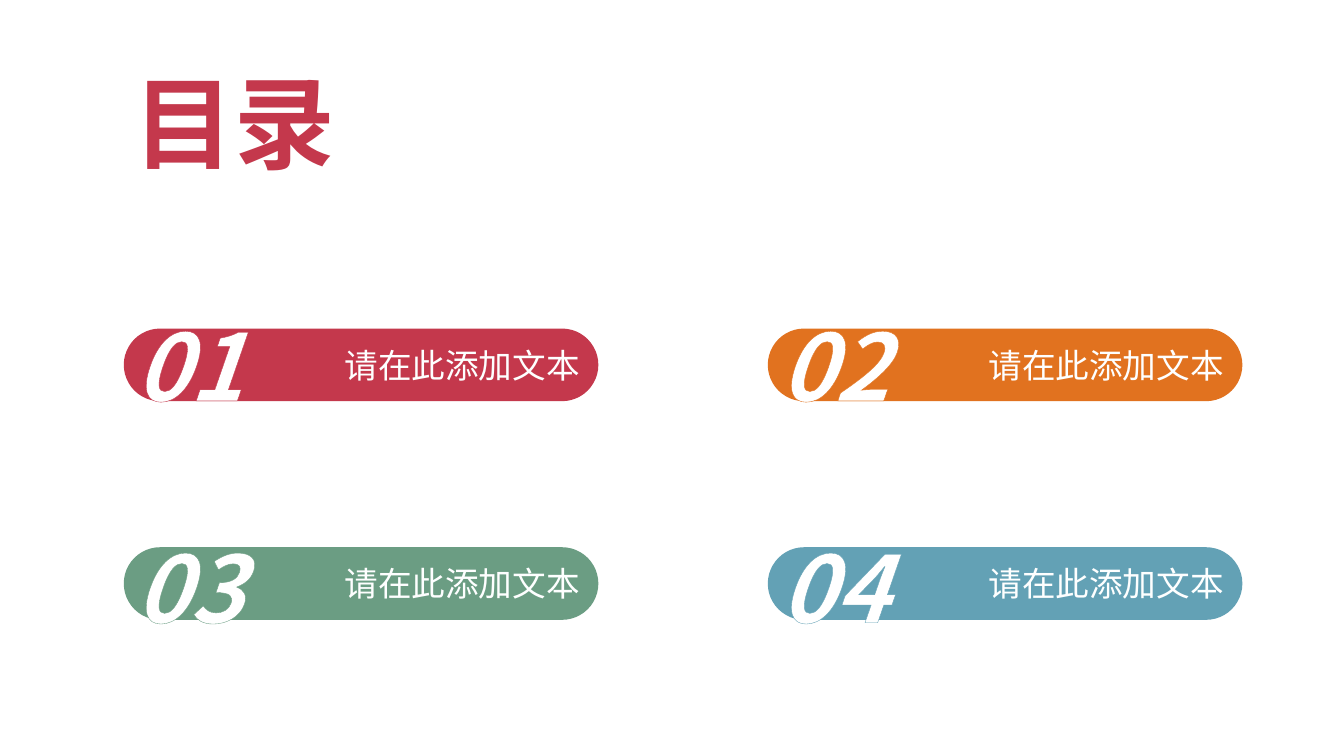
"""Build a contents slide with four numbered bars."""
from dataclasses import dataclass

from lxml import etree
from pptx import Presentation
from pptx.dml.color import RGBColor
from pptx.enum.shapes import MSO_SHAPE
from pptx.enum.text import MSO_ANCHOR, MSO_AUTO_SIZE, PP_ALIGN
from pptx.oxml.ns import qn
from pptx.shapes.base import BaseShape
from pptx.slide import Slide
from pptx.util import Cm, Pt

ROUND = MSO_SHAPE.ROUNDED_RECTANGLE
MIDDLE = MSO_ANCHOR.MIDDLE
GROW = MSO_AUTO_SIZE.SHAPE_TO_FIT_TEXT
JUST, RIGHT, CENTER = PP_ALIGN.JUSTIFY, PP_ALIGN.RIGHT, PP_ALIGN.CENTER

COLORS = {
    "red": "C4384C",
    "orange": "E1721F",
    "green": "6B9D83",
    "blue": "63A1B5",
    "label": "FEFFFF",
    "white": "FFFFFF",
}
SANS = "Noto Sans CJK SC"
TITLE = {"name": SANS, "size": Pt(72), "bold": True}
LABEL = {"name": "Calibri", "size": Pt(24)}
NUMBER = {"name": SANS, "size": Pt(66), "bold": True, "italic": True}
PAD = Cm(0.2)
FRAME = {
    "word_wrap": False,
    "vertical_anchor": MIDDLE,
    "margin_left": PAD,
    "margin_top": PAD,
    "margin_right": PAD,
    "margin_bottom": PAD,
}
GROWN = {"word_wrap": True, "auto_size": GROW}


@dataclass(frozen=True)
class Grid:
    """Hold the first cell and the steps of a grid, in centimetres."""

    left: float
    top: float
    across: float
    down: float
    width: float
    height: float

    def place(self, index: int) -> tuple[Cm, Cm, Cm, Cm]:
        """Return the box of a cell in a grid of two columns."""
        row, col = divmod(index, 2)
        return (Cm(self.left + col * self.across), Cm(self.top + row * self.down),
                Cm(self.width), Cm(self.height))


@dataclass(frozen=True)
class Item:
    """Describe one entry of the contents."""

    number: str
    text: str
    color: str


BARS = Grid(3.12, 8.28, 16.23, 5.51, 11.96, 1.83)
DIGITS = Grid(2.29, 7.65, 16.26, 5.59, 4.93, 3.07)
ITEMS = [
    Item(f"{index:02}", "请在此添加文本", color)
    for index, color in enumerate(("red", "orange", "green", "blue"), 1)
]


def apply(target: object, values: dict) -> None:
    """Set each format value on the target."""
    for name, value in values.items():
        setattr(target, name, value)


def write(shape: BaseShape, text: str, font: dict, color: str,
          align: PP_ALIGN, frame: dict, edge: str = "") -> None:
    """Write one styled line of text into a shape."""
    apply(shape.text_frame, frame)
    para = shape.text_frame.paragraphs[0]
    para.alignment = align
    run = para.add_run()
    run.text = text
    apply(run.font, font)
    run.font.color.rgb = RGBColor.from_string(COLORS[color])
    props = run.font._element
    if font["name"] == SANS:
        etree.SubElement(props, qn("a:ea"), typeface=SANS)
    if edge:
        line = etree.Element(qn("a:ln"), w=str(Pt(0.75)))
        fill = etree.SubElement(line, qn("a:solidFill"))
        etree.SubElement(fill, qn("a:srgbClr"), val=COLORS[edge])
        props.insert(0, line)


def add_bar(slide: Slide, index: int, item: Item) -> None:
    """Draw the coloured bar of an entry."""
    bar = slide.shapes.add_shape(ROUND, *BARS.place(index))
    bar.adjustments[0] = 0.5
    bar.shadow.inherit = False
    bar.fill.solid()
    bar.fill.fore_color.rgb = RGBColor.from_string(COLORS[item.color])
    bar.line.fill.background()
    write(bar, item.text, LABEL, "label", RIGHT, FRAME)


def add_digits(slide: Slide, index: int, item: Item) -> None:
    """Draw the outlined number of an entry."""
    box = slide.shapes.add_textbox(*DIGITS.place(index))
    write(box, item.number, NUMBER, "white", CENTER, GROWN, item.color)


def main() -> None:
    """Build and save the slide."""
    deck = Presentation()
    deck.slide_width, deck.slide_height = Cm(33.87), Cm(19.05)
    slide = deck.slides.add_slide(deck.slide_layouts[6])
    title = slide.shapes.add_textbox(Cm(3.12), Cm(1.4), Cm(9.65), Cm(3.33))
    write(title, "目录", TITLE, "red", JUST, GROWN)
    for draw in (add_bar, add_digits):
        for index, item in enumerate(ITEMS):
            draw(slide, index, item)
    deck.save("out.pptx")


if __name__ == "__main__":
    main()
